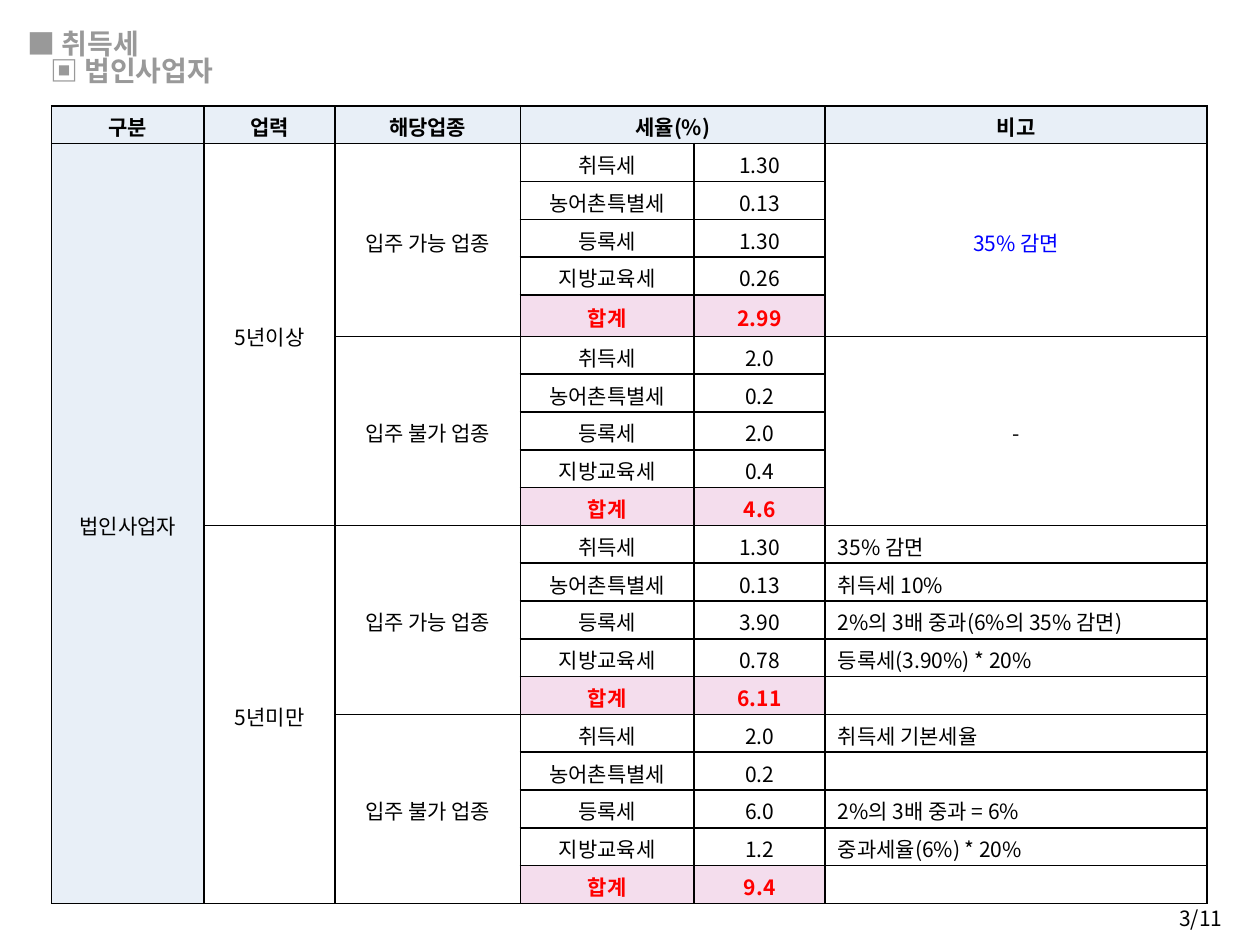
from dataclasses import dataclass

from lxml.etree import SubElement
from pptx import Presentation
from pptx.dml.color import RGBColor
from pptx.enum.text import MSO_ANCHOR, MSO_AUTO_SIZE, PP_ALIGN
from pptx.oxml.ns import qn
from pptx.util import Inches, Pt


@dataclass(frozen=True)
class Theme:
    font: str = "Noto Sans CJK KR"
    ink: str = "000000"
    heading: str = "999999"
    accent: str = "0000FF"
    total: str = "FF0000"
    header_fill: str = "E8EFF7"
    total_fill: str = "F4DDED"
    heading_size: int = 16
    body_size: int = 12


THEME = Theme()
COLUMNS = [1.21, 1.04, 1.47, 1.38, 1.04, 3.03]
HEADERS = ["구분", "업력", "해당업종", "세율(%)", "", "비고"]
TAXES = ["취득세", "농어촌특별세", "등록세", "지방교육세", "합계"]
AGES = ["5년이상", "5년미만"]
INDUSTRIES = ["입주 가능 업종", "입주 불가 업종"]
RATES = [
    ["1.30", "0.13", "1.30", "0.26", "2.99"],
    ["2.0", "0.2", "2.0", "0.4", "4.6"],
    ["1.30", "0.13", "3.90", "0.78", "6.11"],
    ["2.0", "0.2", "6.0", "1.2", "9.4"],
]
SHARED_REMARKS = [("35% 감면", THEME.accent), ("-", THEME.ink)]
ROW_REMARKS = [
    "35% 감면", "취득세 10%", "2%의 3배 중과(6%의 35% 감면)", "등록세(3.90%) * 20%", "",
    "취득세 기본세율", "", "2%의 3배 중과 = 6%", "중과세율(6%) * 20%", "",
]


def format_paragraph(p, size, color, bold=False, align=PP_ALIGN.LEFT):
    p.alignment = align
    font = p.font
    font.name, font.size, font.bold = THEME.font, Pt(size), bold
    font.color.rgb = RGBColor.from_string(color)
    SubElement(font._element, qn("a:ea"), typeface=THEME.font)


def draw_borders(cell):
    tc_pr = cell._tc.get_or_add_tcPr()
    for side in ("lnL", "lnR", "lnT", "lnB"):
        line = SubElement(tc_pr, qn(f"a:{side}"), w=str(Pt(1)))
        fill = SubElement(line, qn("a:solidFill"))
        SubElement(fill, qn("a:srgbClr"), val=THEME.ink)


def prepare_cell(cell):
    draw_borders(cell)
    cell.fill.background()
    cell.margin_top, cell.margin_bottom = Inches(0.03), 0
    cell.vertical_anchor = MSO_ANCHOR.MIDDLE
    end = cell.text_frame.paragraphs[0]._p.get_or_add_endParaRPr()
    end.set("sz", str(THEME.body_size * 100))


def write_cell(cell, text, color=THEME.ink, bold=False, fill=None, align=PP_ALIGN.CENTER):
    if text:
        p = cell.text_frame.paragraphs[0]
        p.text = text
        format_paragraph(p, THEME.body_size, color, bold, align)
    if fill:
        cell.fill.solid()
        cell.fill.fore_color.rgb = RGBColor.from_string(fill)


def write_merged(table, row, col, rows, text, **style):
    cell = table.cell(row, col)
    cell.merge(table.cell(row + rows - 1, col))
    write_cell(cell, text, **style)


def add_heading(s):
    sp = s.shapes.title
    sp.left, sp.top, sp.width, sp.height = map(Inches, (0.12, 0.21, 1.81, 0.63))
    tf = sp.text_frame
    tf.word_wrap = False
    tf.auto_size = MSO_AUTO_SIZE.NONE
    tf.vertical_anchor = MSO_ANCHOR.TOP
    tf.text = "■ 취득세\n▣ 법인사업자"
    for level, p in enumerate(tf.paragraphs):
        format_paragraph(p, THEME.heading_size, THEME.heading, True)
        p.line_spacing = 0.8
        p.space_before = Pt(0)
        p._p.get_or_add_pPr().set("marL", str(Inches(0.18 * level)))


def add_tax_table(s):
    count = len(TAXES)
    total_rows = count * len(RATES)
    frame = s.shapes.add_table(total_rows + 1, len(COLUMNS), Inches(0.41), Inches(0.84),
                               Inches(sum(COLUMNS)), Inches(6.33))
    table = frame.table
    table.first_row = table.horz_banding = False
    for column, width in zip(table.columns, COLUMNS):
        column.width = Inches(width)
    for i, row in enumerate(table.rows):
        row.height = Inches(0.33 if i == count else 0.3)
    for cell in table.iter_cells():
        prepare_cell(cell)

    for col, text in enumerate(HEADERS):
        write_cell(table.cell(0, col), text, bold=True, fill=THEME.header_fill)
    table.cell(0, 3).merge(table.cell(0, 4))

    write_merged(table, 1, 0, total_rows, "법인사업자", fill=THEME.header_fill)
    for i, age in enumerate(AGES):
        write_merged(table, 1 + i * 2 * count, 1, 2 * count, age)
    for block, rates in enumerate(RATES):
        top = 1 + block * count
        write_merged(table, top, 2, count, INDUSTRIES[block % 2])
        for row, values in enumerate(zip(TAXES, rates), top):
            style = {}
            if values[0] == TAXES[-1]:
                style = dict(color=THEME.total, bold=True, fill=THEME.total_fill)
            for col, text in enumerate(values, 3):
                write_cell(table.cell(row, col), text, **style)
    for block, (text, color) in enumerate(SHARED_REMARKS):
        write_merged(table, 1 + block * count, 5, count, text, color=color)
    for row, text in enumerate(ROW_REMARKS, 1 + 2 * count):
        write_cell(table.cell(row, 5), text, align=PP_ALIGN.LEFT)


def add_page_number(s):
    sp = s.shapes.add_textbox(Inches(9.05), Inches(7.14), Inches(0.75), Inches(0.29))
    tf = sp.text_frame
    tf.word_wrap = True
    p = tf.paragraphs[0]
    p.text = "3/11"
    format_paragraph(p, THEME.body_size, THEME.ink, align=PP_ALIGN.RIGHT)


def main():
    prs = Presentation()
    prs.slide_width, prs.slide_height = Inches(10), Inches(7.5)
    s = prs.slides.add_slide(prs.slide_layouts[5])
    add_page_number(s)
    add_tax_table(s)
    add_heading(s)
    prs.save("out.pptx")


if __name__ == "__main__":
    main()
